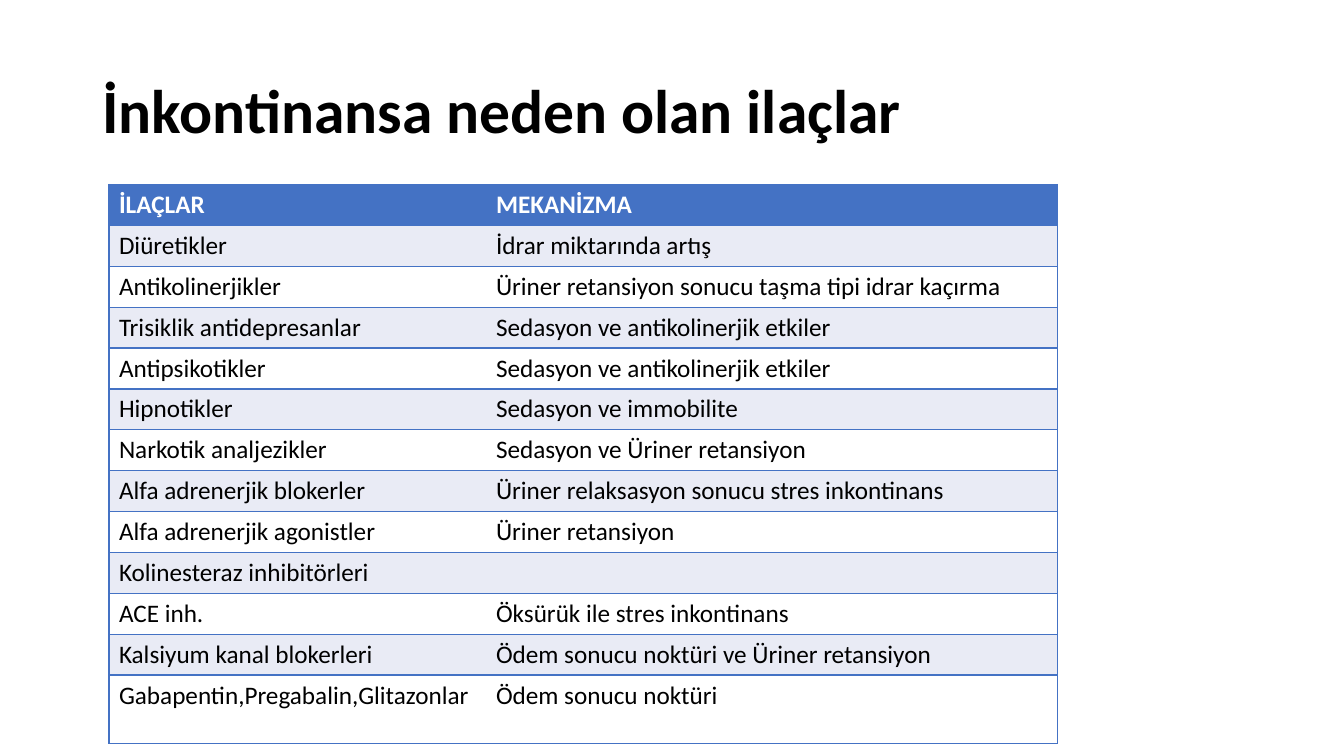
"""Builds a slide with a table of drugs that cause incontinence."""
from lxml.etree import SubElement
from pptx import Presentation
from pptx.dml.color import RGBColor
from pptx.enum.text import MSO_ANCHOR as ANCHOR, MSO_AUTO_SIZE as AUTOSIZE, PP_ALIGN as ALIGN
from pptx.oxml.ns import qn
from pptx.util import Pt

FONT = "Calibri"
BLACK = RGBColor(0x00, 0x00, 0x00)
WHITE = RGBColor(0xFF, 0xFF, 0xFF)
BLUE = RGBColor(0x44, 0x72, 0xC4)
BAND = RGBColor(0xE9, 0xEB, 0xF5)

TITLE = "İnkontinansa neden olan ilaçlar"
ROWS = [
    ("İLAÇLAR", "MEKANİZMA"),
    ("Diüretikler", "İdrar miktarında artış"),
    ("Antikolinerjikler", "Üriner retansiyon sonucu taşma tipi idrar kaçırma"),
    ("Trisiklik antidepresanlar", "Sedasyon ve antikolinerjik etkiler"),
    ("Antipsikotikler", "Sedasyon ve antikolinerjik etkiler"),
    ("Hipnotikler", "Sedasyon ve immobilite"),
    ("Narkotik analjezikler", "Sedasyon ve Üriner retansiyon"),
    ("Alfa adrenerjik blokerler", "Üriner relaksasyon sonucu stres inkontinans"),
    ("Alfa adrenerjik agonistler", "Üriner retansiyon"),
    ("Kolinesteraz inhibitörleri", ""),
    ("ACE inh.", "Öksürük ile stres inkontinans"),
    ("Kalsiyum kanal blokerleri", "Ödem sonucu noktüri ve Üriner retansiyon"),
    ("Gabapentin,Pregabalin,Glitazonlar", "Ödem sonucu noktüri"),
]
COL_WIDTHS = (269.3, 408.2)
ROW_HEIGHT, LAST_HEIGHT = 28.1, 49


def add_run(p, text, size, color, bold):
    r = p.add_run()
    r.text = text
    r.font.name = FONT
    r.font.size = Pt(size)
    r.font.bold = bold
    r.font.color.rgb = color


def add_title(s, text):
    sp = s.shapes.title
    sp.left, sp.top, sp.width, sp.height = Pt(66), Pt(28.8), Pt(828), Pt(104.4)
    tf = sp.text_frame
    tf.auto_size = AUTOSIZE.NONE
    tf.word_wrap = True
    tf.vertical_anchor = ANCHOR.MIDDLE
    p = tf.paragraphs[0]
    p.alignment = ALIGN.LEFT
    p.line_spacing = 0.9
    add_run(p, text, 44, BLACK, True)


def set_borders(cell, visible):
    tcPr = cell._tc.get_or_add_tcPr()
    for side in "LRTB":
        ln = SubElement(tcPr, qn(f"a:ln{side}"), w=str(Pt(1)))
        if side in visible:
            fill = SubElement(ln, qn("a:solidFill"))
            SubElement(fill, qn("a:srgbClr"), val=str(BLUE))
        else:
            SubElement(ln, qn("a:noFill"))


def format_cell(cell, text, fill, color, bold, borders):
    set_borders(cell, borders)
    cell.fill.solid()
    cell.fill.fore_color.rgb = fill
    if text:
        add_run(cell.text_frame.paragraphs[0], text, 18, color, bold)


def add_drug_table(s, rows):
    heights = [ROW_HEIGHT] * (len(rows) - 1) + [LAST_HEIGHT]
    table = s.shapes.add_table(len(rows), len(COL_WIDTHS), Pt(77.8), Pt(131.8),
                               Pt(sum(COL_WIDTHS)), Pt(sum(heights))).table
    for col, width in zip(table.columns, COL_WIDTHS):
        col.width = Pt(width)
    for i, (texts, height) in enumerate(zip(rows, heights)):
        table.rows[i].height = Pt(height)
        header = i == 0
        fill = BLUE if header else BAND if i % 2 else WHITE
        color = WHITE if header else BLACK
        for j, (text, borders) in enumerate(zip(texts, ("LTB", "RTB"))):
            format_cell(table.cell(i, j), text, fill, color, header, borders)


def main():
    prs = Presentation()
    prs.slide_width, prs.slide_height = Pt(960), Pt(540)
    s = prs.slides.add_slide(prs.slide_layouts[5])
    add_title(s, TITLE)
    add_drug_table(s, ROWS)
    prs.save("out.pptx")


if __name__ == "__main__":
    main()
